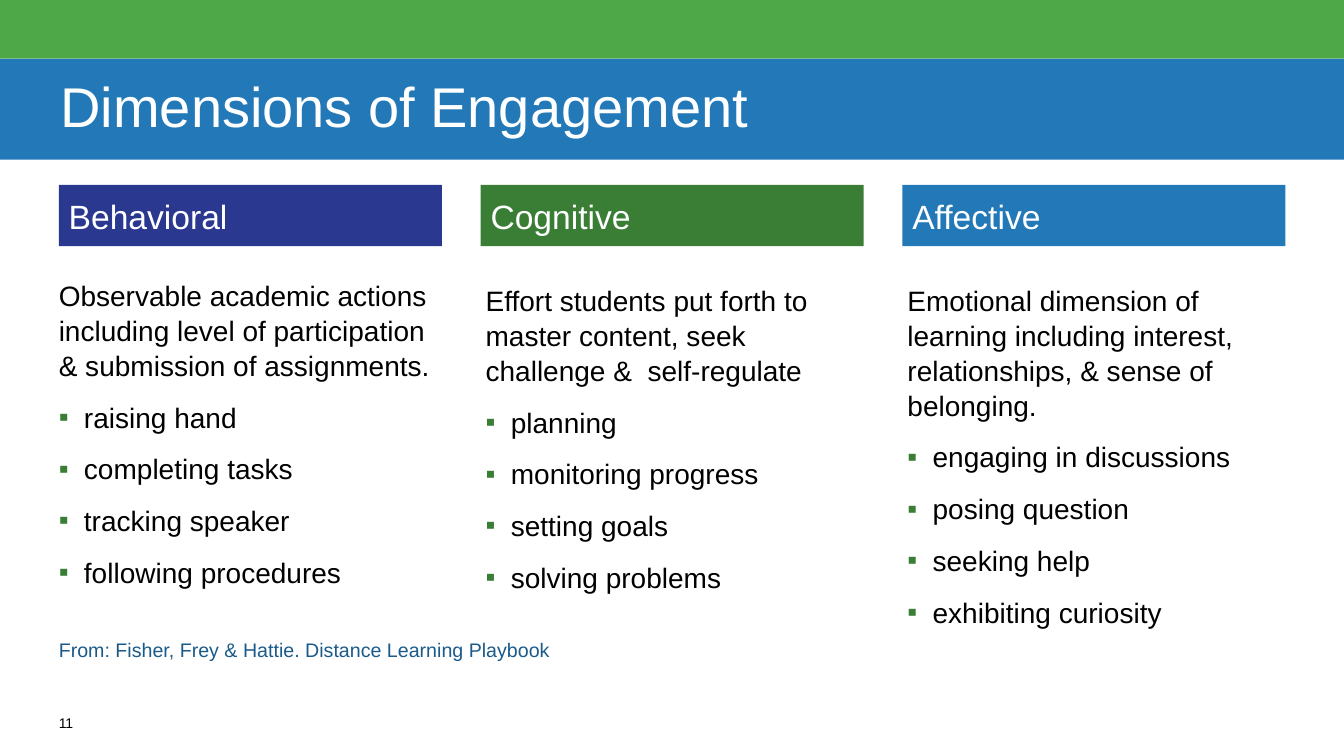
from lxml.etree import SubElement
from pptx import Presentation
from pptx.dml.color import RGBColor
from pptx.enum.shapes import MSO_SHAPE
from pptx.enum.text import MSO_ANCHOR, PP_ALIGN
from pptx.oxml.ns import qn
from pptx.util import Pt

GREEN = "3A7E36"
BLUE = "2379B8"
LEFT, WIDTH, STEP = 42, 273.6, 301.3
COLUMNS = [
    ("Behavioral", "2B3890", 0,
     "Observable academic actions including level of participation & submission of assignments.",
     ["raising hand", "completing tasks", "tracking speaker", "following procedures"]),
    ("Cognitive", GREEN, 3.6,
     "Effort students put forth to master content, seek challenge &  self-regulate",
     ["planning", "monitoring progress", "setting goals", "solving problems"]),
    ("Affective", BLUE, 3.6,
     "Emotional dimension of learning including interest, relationships, & sense of belonging.",
     ["engaging in discussions", "posing question", "seeking help", "exhibiting curiosity"]),
]


def color(code):
    return RGBColor.from_string(code)


def set_frame(shape, side, top, anchor=MSO_ANCHOR.TOP):
    frame = shape.text_frame
    frame.word_wrap = True
    frame.vertical_anchor = anchor
    frame.margin_left = frame.margin_right = Pt(side)
    frame.margin_top = frame.margin_bottom = Pt(top)
    return frame


def style(para, text, size, code):
    para.text = text
    para.alignment = PP_ALIGN.LEFT
    para.font.name = "Arial"
    para.font.size = Pt(size)
    para.font.color.rgb = color(code)


def add_bar(slide, left, top, width, height, fill):
    bar = slide.shapes.add_shape(
        MSO_SHAPE.RECTANGLE, Pt(left), Pt(top), Pt(width), Pt(height))
    bar.shadow.inherit = False
    bar.fill.solid()
    bar.fill.fore_color.rgb = color(fill)
    bar.line.fill.background()
    return bar


def add_label(bar, text, size, side, top):
    frame = set_frame(bar, side, top, MSO_ANCHOR.MIDDLE)
    style(frame.paragraphs[0], text, size, "FFFFFF")
    return frame.paragraphs[0]


def add_text(slide, left, top, width, height, text, size, code, inset=0):
    box = slide.shapes.add_textbox(Pt(left), Pt(top), Pt(width), Pt(height))
    frame = set_frame(box, inset, inset)
    style(frame.paragraphs[0], text, size, code)
    return frame


def add_bullet(para):
    props = para._p.get_or_add_pPr()
    props.set("marL", str(Pt(18)))
    props.set("indent", str(-Pt(18)))
    tint = SubElement(props, qn("a:buClr"))
    SubElement(tint, qn("a:srgbClr"), val=GREEN)
    SubElement(props, qn("a:buFont"), typeface="Arial")
    SubElement(props, qn("a:buChar"), char="▪")


def add_column(slide, left, head, fill, inset, intro, items):
    bar = add_bar(slide, left, 132, WIDTH, 43.9, fill)
    add_label(bar, head, 24, 7.2, 7.2)
    frame = add_text(slide, left, 198, WIDTH, 252, intro, 20, "000000", inset)
    for item in items:
        para = frame.add_paragraph()
        add_bullet(para)
        style(para, item, 20, "000000")
        para.space_before = Pt(6)
    for para in frame.paragraphs:
        para.space_after = Pt(6)
        para.line_spacing = 1.04


def main():
    deck = Presentation()
    deck.slide_width, deck.slide_height = Pt(960), Pt(540)
    slide = deck.slides.add_slide(deck.slide_layouts[6])
    add_bar(slide, 0, 0, 960, 42, "4EA848")
    title = add_bar(slide, 0, 42, 960, 72, BLUE)
    add_label(title, "Dimensions of Engagement", 40, 43.2, 0).line_spacing = 0.9
    for index, column in enumerate(COLUMNS):
        add_column(slide, LEFT + index * STEP, *column)
    add_text(slide, LEFT, 456, 876, 17.3,
             "From: Fisher, Frey & Hattie. Distance Learning Playbook", 14, "1A5B8A")
    add_text(slide, LEFT, 510, 30, 18, "11", 10, "000000")
    deck.save("out.pptx")


if __name__ == "__main__":
    main()
